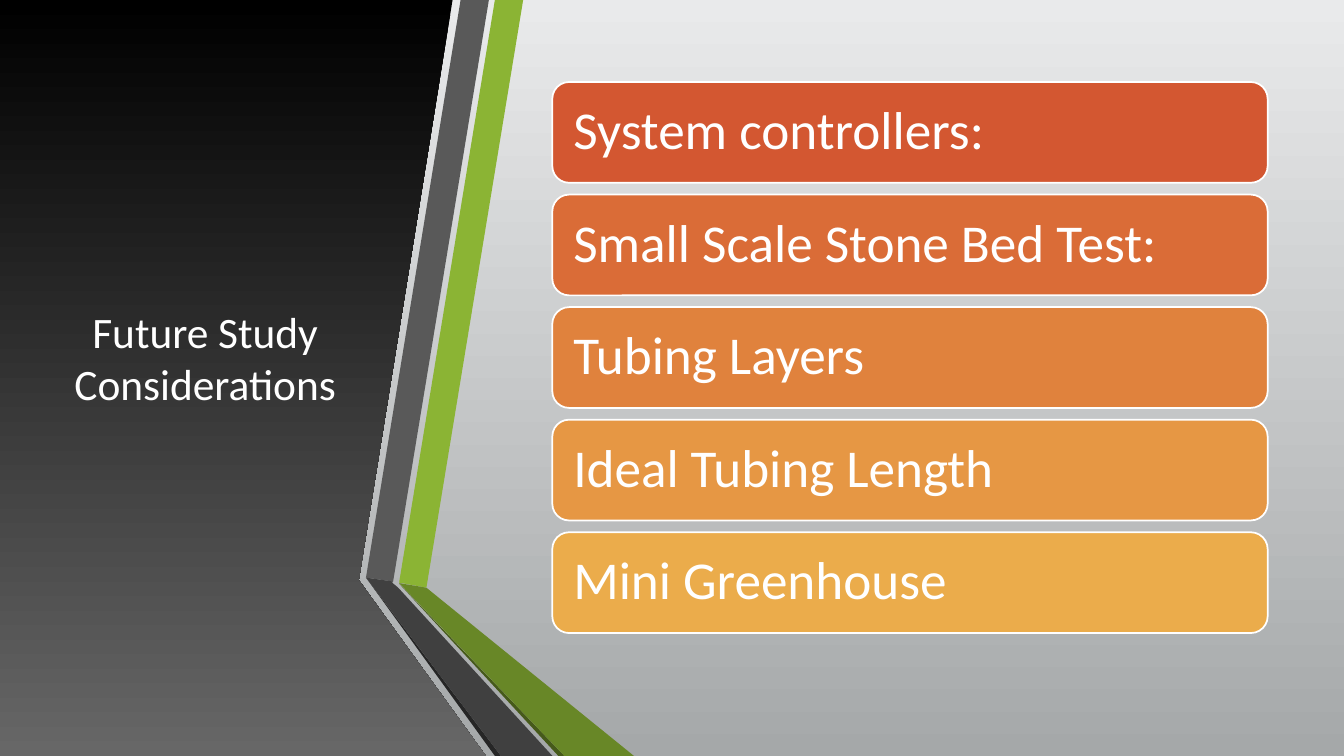
from pptx import Presentation
from pptx.dml.color import RGBColor
from pptx.enum.shapes import MSO_SHAPE
from pptx.enum.text import MSO_ANCHOR, MSO_AUTO_SIZE, PP_ALIGN
from pptx.util import Pt

ROUNDED = MSO_SHAPE.ROUNDED_RECTANGLE
MIDDLE = MSO_ANCHOR.MIDDLE
NO_AUTOFIT = MSO_AUTO_SIZE.NONE
LEFT = PP_ALIGN.LEFT
CENTER = PP_ALIGN.CENTER

COLORS = {
    "white": "FFFFFF",
    "background_top": "E9EAEB",
    "background_bottom": "A5A8A9",
    "panel_top": "000000",
    "panel_bottom": "676767",
    "green": "8BB434",
    "green_fold": "688727",
    "green_shadow": "465A1A",
    "gray": "595959",
    "gray_fold": "404040",
    "gray_shadow": "262626",
    "bar_1": "D35731",
    "bar_2": "DA6C37",
    "bar_3": "E0823D",
    "bar_4": "E69744",
    "bar_5": "EBAC4B",
}

BOTTOM = 540
PANEL = [(0, 0), (323.3, 0), (256.3, 414.4), (347, BOTTOM), (0, BOTTOM)]
RIBBONS = [
    ("green", [(285.1, 416.2), (304.6, 419.8), (373.7, 0), (353.5, 0)]),
    ("gray", [(349.2, 0), (329, 0), (261.4, 412.6), (280.8, 415.4)]),
    ("gray_shadow", [(261.4, 412.6), (353.5, BOTTOM), (357.8, BOTTOM)]),
    ("green_shadow", [(285.1, 416.9), (398.9, BOTTOM), (403.2, BOTTOM)]),
    ("green_fold", [(285.1, 416.5), (403.2, BOTTOM), (452.9, BOTTOM), (304.6, 419.8)]),
    ("gray_fold", [(394.6, BOTTOM), (284.4, 419.8), (280.1, 416.2), (280.8, 415.4),
                   (261.4, 412.6), (357.8, BOTTOM)]),
]
TOPICS = [
    "System controllers:",
    "Small Scale Stone Bed Test:",
    "Tubing Layers",
    "Ideal Tubing Length",
    "Mini Greenhouse",
]
BAR_TOP = 58.6
BAR_PITCH = 80.4

presentation = Presentation()
presentation.slide_width = Pt(960)
presentation.slide_height = Pt(BOTTOM)
slide = presentation.slides.add_slide(presentation.slide_layouts[5])


def write_text(shape, text, size, align, inset=7.2, spacing=1.0):
    frame = shape.text_frame
    frame.word_wrap = True
    frame.auto_size = NO_AUTOFIT
    frame.vertical_anchor = MIDDLE
    frame.margin_left = frame.margin_right = Pt(inset)
    paragraph = frame.paragraphs[0]
    paragraph.alignment = align
    paragraph.line_spacing = spacing
    run = paragraph.add_run()
    run.text = text
    run.font.name = "Calibri"
    run.font.size = Pt(size)
    run.font.color.rgb = RGBColor.from_string(COLORS["white"])


def add_outline(corners):
    points = [(Pt(x), Pt(y)) for x, y in corners]
    builder = slide.shapes.build_freeform(*points[0])
    builder.add_line_segments(points[1:], close=True)
    shape = builder.convert_to_shape()
    shape.shadow.inherit = False
    shape.line.fill.background()
    return shape


panel = add_outline(PANEL)
for fill, name in ((slide.background.fill, "background"), (panel.fill, "panel")):
    fill.gradient()
    fill.gradient_angle = 270
    for stop, position, end in zip(fill.gradient_stops, (0, 1), ("top", "bottom")):
        stop.position = position
        stop.color.rgb = RGBColor.from_string(COLORS[f"{name}_{end}"])

title = slide.shapes.title
title.left, title.top, title.width, title.height = Pt(42.5), Pt(54), Pt(208), Pt(402)
write_text(title, "Future Study Considerations", size=31, align=CENTER)
panel.element.addnext(title.element)

for color, corners in RIBBONS:
    ribbon = add_outline(corners)
    ribbon.fill.solid()
    ribbon.fill.fore_color.rgb = RGBColor.from_string(COLORS[color])

for index, topic in enumerate(TOPICS):
    bar = slide.shapes.add_shape(
        ROUNDED, Pt(394.5), Pt(BAR_TOP + index * BAR_PITCH), Pt(511), Pt(72))
    bar.shadow.inherit = False
    bar.fill.solid()
    bar.fill.fore_color.rgb = RGBColor.from_string(COLORS[f"bar_{index + 1}"])
    bar.line.color.rgb = RGBColor.from_string(COLORS["white"])
    bar.line.width = Pt(1.25)
    write_text(bar, topic, size=38, align=LEFT, inset=11.5, spacing=0.9)

presentation.save("out.pptx")
